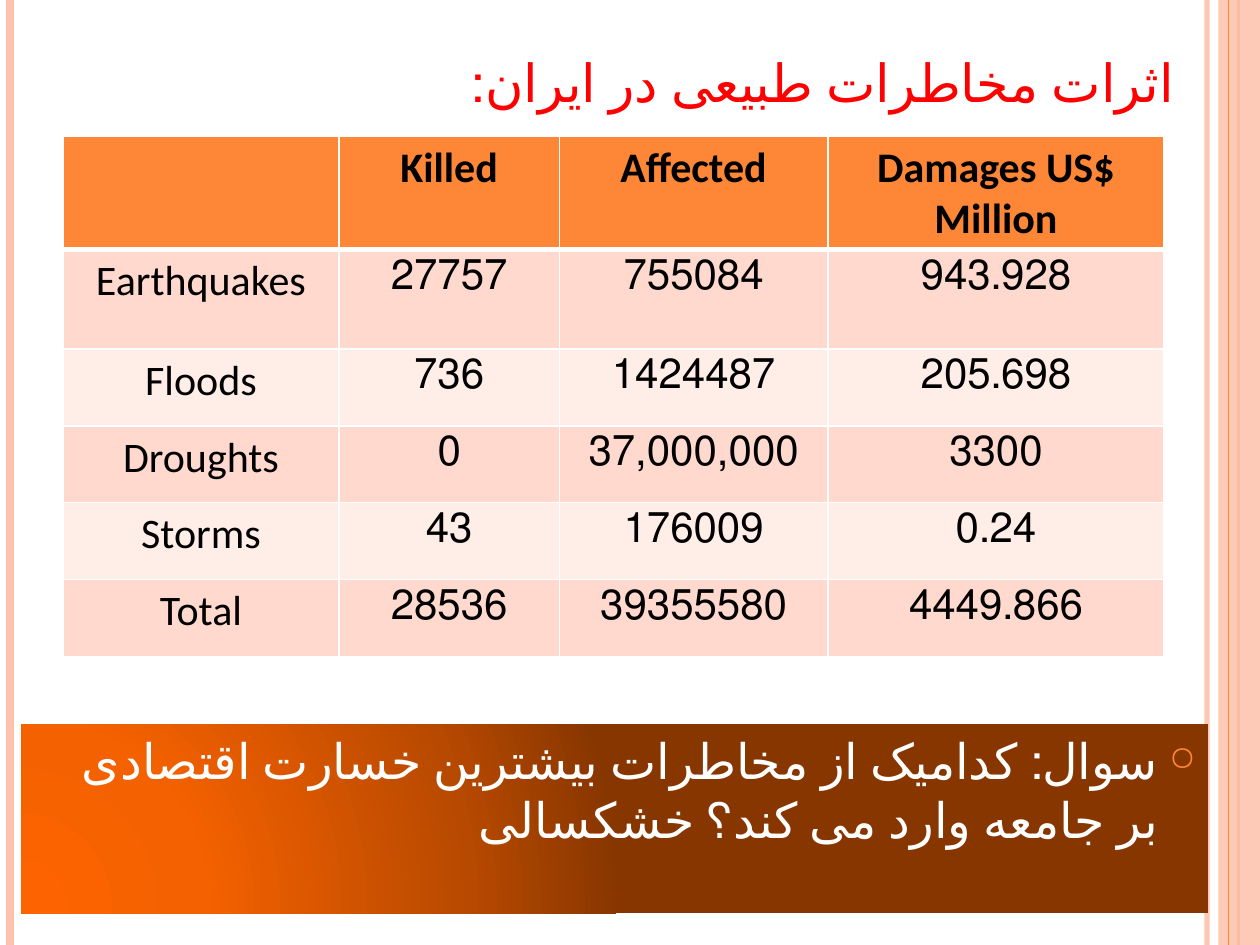
from lxml.etree import SubElement
from pptx import Presentation
from pptx.dml.color import RGBColor
from pptx.enum.lang import MSO_LANGUAGE_ID
from pptx.enum.shapes import MSO_CONNECTOR, MSO_SHAPE
from pptx.enum.text import MSO_ANCHOR, PP_ALIGN
from pptx.oxml import parse_xml
from pptx.oxml.ns import nsdecls, qn
from pptx.util import Inches, Pt

COLORS = {
    "peach": "FEC3AE", "orange": "FE8637", "red": "FF0000",
    "black": "000000", "white": "FFFFFF",
    "band_dark": "FFD9CE", "band_light": "FFEDE8",
}

TITLE = "اثرات مخاطرات طبیعی در ایران:"
QUESTION = ("سوال: کدامیک از مخاطرات بیشترین خسارت اقتصادی "
            "بر جامعه وارد می کند؟ خشکسالی")
ROWS = [
    ("", "Killed", "Affected", "Damages US$ Million"),
    ("Earthquakes", "27757", "755084", "943.928"),
    ("Floods", "736", "1424487", "205.698"),
    ("Droughts", "0", "37,000,000", "3300"),
    ("Storms", "43", "176009", "0.24"),
    ("Total", "28536", "39355580", "4449.866"),
]
COLUMN_WIDTHS = [2.19, 1.75, 2.13, 2.67]
ROW_HEIGHTS = [0.79, 0.79] + [0.61] * 4

# x, colour, width in points, opacity in percent
LINES_BEHIND = [
    (9.58, "peach", 3, 93),
    (0.08, "peach", 4.5, 100),
    (9.83, "orange", 1.5, 100),
]
LINES_IN_FRONT = [(9.75, "orange", 0.75, 100)]
GRADIENT_STOPS = [(0, "FD6400"), (30, "F46100"), (75, "B74900"), (100, "873600")]

PERSIAN = {"language_id": MSO_LANGUAGE_ID.FARSI}
TITLE_FORMAT = {"name": "TeX Gyre Schola", "size": Pt(30), **PERSIAN}
CELL_FORMAT = {"name": "Calibri", "size": Pt(24), "bold": False}
HEADER_FORMAT = {**CELL_FORMAT, "bold": True}
QUESTION_FORMAT = {"name": "Roboto", "size": Pt(28), **PERSIAN}


def rgb(name):
    return RGBColor.from_string(COLORS[name])


def set_opacity(parent, percent):
    color = next(parent.iter(qn("a:srgbClr")))
    SubElement(color, qn("a:alpha"), val=str(percent * 1000))


def draw_lines(lines):
    for x, color, width, opacity in lines:
        line = page.shapes.add_connector(MSO_CONNECTOR.STRAIGHT, Inches(x), 0,
                                         Inches(x), deck.slide_height)
        line.line.color.rgb = rgb(color)
        line.line.width = Pt(width)
        if opacity < 100:
            set_opacity(line._element.spPr, opacity)
        SubElement(line._element.spPr, qn("a:effectLst"))


def write_rtl(frame, text, text_format, color, align):
    frame.word_wrap = True
    para = frame.paragraphs[0]
    para.alignment = align
    para._p.get_or_add_pPr().set("rtl", "1")
    if text:
        span = para.add_run()
        span.text = text
        for key, value in text_format.items():
            setattr(span.font, key, value)
        span.font.color.rgb = rgb(color)
    return para


def add_borders(cell, bottom_width):
    properties = cell._tc.get_or_add_tcPr()
    widths = {"lnL": 1, "lnR": 1, "lnT": 1, "lnB": bottom_width}
    for index, (side, width) in enumerate(widths.items()):
        properties.insert(index, parse_xml(
            f'<a:{side} {nsdecls("a")} w="{Pt(width)}"><a:solidFill>'
            f'<a:srgbClr val="{COLORS["white"]}"/></a:solidFill></a:{side}>'))


deck = Presentation()
deck.slide_width, deck.slide_height = Inches(10), Inches(7.5)
page = deck.slides.add_slide(deck.slide_layouts[6])

# Side stripes
draw_lines(LINES_BEHIND)
stripe = page.shapes.add_shape(MSO_SHAPE.RECTANGLE, Inches(9.67), 0,
                               Inches(0.33), deck.slide_height)
stripe.shadow.inherit = False
stripe.fill.solid()
stripe.fill.fore_color.rgb = rgb("peach")
set_opacity(stripe._element.spPr, 87)
stripe.line.fill.background()
draw_lines(LINES_IN_FRONT)

# Title
title = page.shapes.add_textbox(Inches(1.25), Inches(0.25), Inches(8.17), Inches(0.7))
title.text_frame.vertical_anchor = MSO_ANCHOR.BOTTOM
write_rtl(title.text_frame, TITLE, TITLE_FORMAT, "red", PP_ALIGN.RIGHT)

# Table of losses
table = page.shapes.add_table(
    len(ROWS), len(COLUMN_WIDTHS), Inches(0.5), Inches(1.08),
    Inches(sum(COLUMN_WIDTHS)), Inches(sum(ROW_HEIGHTS))).table
for column, width in zip(table.columns, COLUMN_WIDTHS):
    column.width = Inches(width)
for row_index, values in enumerate(ROWS):
    table.rows[row_index].height = Inches(ROW_HEIGHTS[row_index])
    is_header = row_index == 0
    band = "band_dark" if row_index % 2 else "band_light"
    for column_index, value in enumerate(values):
        cell = table.cell(row_index, column_index)
        cell.fill.solid()
        cell.fill.fore_color.rgb = rgb("orange" if is_header else band)
        add_borders(cell, 3 if is_header else 1)
        write_rtl(cell.text_frame, value, HEADER_FORMAT if is_header else CELL_FORMAT,
                  "black", PP_ALIGN.CENTER)

# Question box with radial gradient and soft shadow
question = page.shapes.add_shape(MSO_SHAPE.RECTANGLE, Inches(0.17), Inches(5.75),
                                 Inches(9.42), Inches(1.5))
question.line.fill.background()
stops = "".join(f'<a:gs pos="{position * 1000}"><a:srgbClr val="{color}"/></a:gs>'
                for position, color in GRADIENT_STOPS)
shape_properties = question._element.spPr
shape_properties.insert(2, parse_xml(
    f'<a:gradFill {nsdecls("a")} rotWithShape="1"><a:gsLst>{stops}</a:gsLst>'
    '<a:path path="circle"><a:fillToRect l="5000" t="100000" r="120000" b="10000"/>'
    '</a:path></a:gradFill>'))
shape_properties.append(parse_xml(
    f'<a:effectLst {nsdecls("a")}><a:outerShdw blurRad="{Pt(4)}" dist="{Pt(1.6)}" '
    f'dir="5400000" rotWithShape="0"><a:srgbClr val="{COLORS["black"]}">'
    '<a:alpha val="42000"/></a:srgbClr></a:outerShdw></a:effectLst>'))
question.text_frame.vertical_anchor = MSO_ANCHOR.TOP
para = write_rtl(question.text_frame, QUESTION, QUESTION_FORMAT, "white", PP_ALIGN.RIGHT)
para.space_before = Pt(6)

# Round bullet with hanging indent
bullet = para._p.get_or_add_pPr()
bullet.set("marL", str(Inches(0.3)))
bullet.set("indent", str(Inches(-0.3)))
bullet_color = SubElement(bullet, qn("a:buClr"))
SubElement(bullet_color, qn("a:srgbClr"), val=COLORS["orange"])
SubElement(bullet, qn("a:buSzPct"), val="70000")
SubElement(bullet, qn("a:buChar"), char="○")

deck.save("out.pptx")
